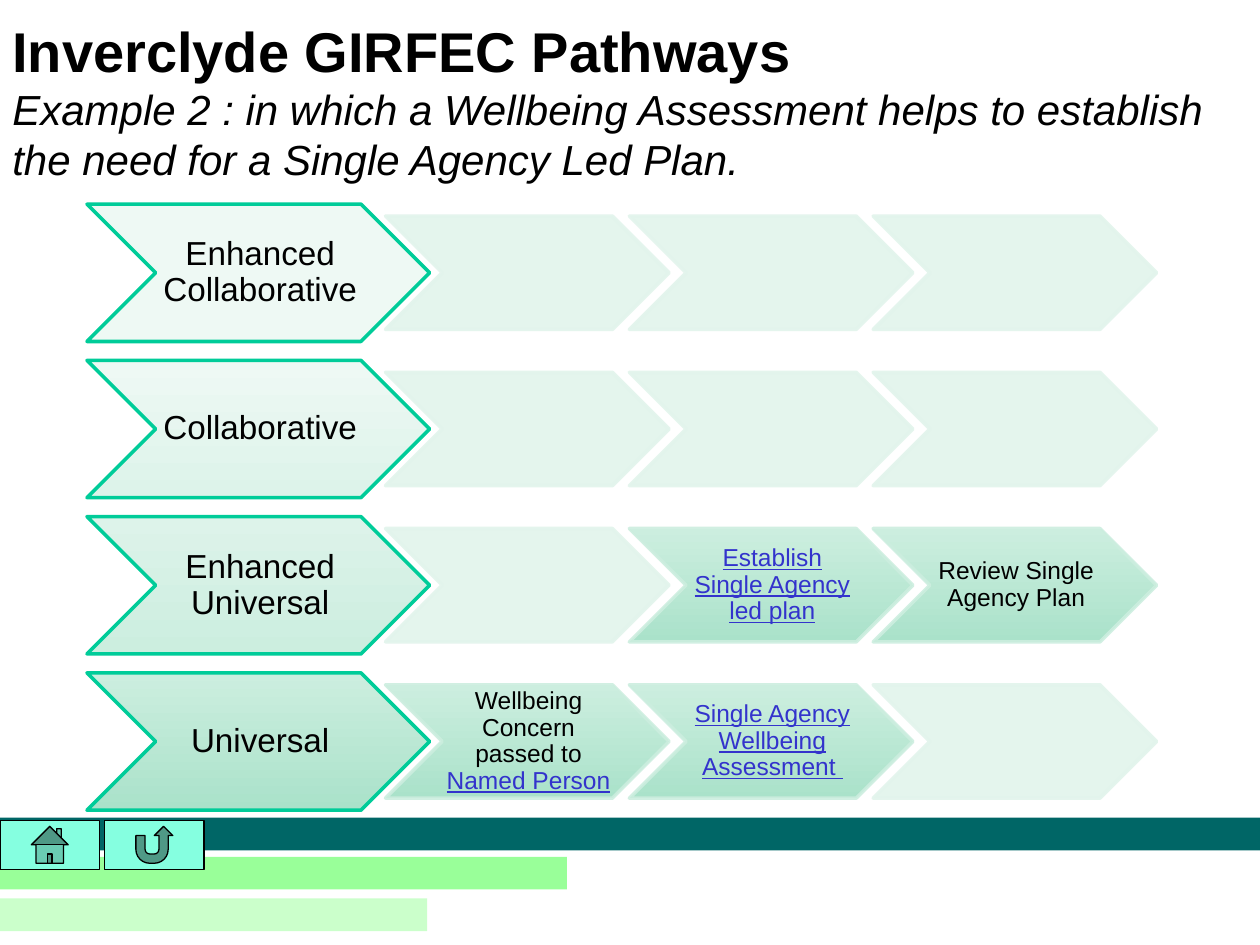
import pptx
import pptx.util
import pptx.dml.color
import pptx.enum.shapes
import pptx.enum.text
import pptx.oxml.ns
import lxml.etree

Inches, Pt = pptx.util.Inches, pptx.util.Pt
Shape = pptx.enum.shapes.MSO_SHAPE
Align, Anchor = pptx.enum.text.PP_ALIGN, pptx.enum.text.MSO_ANCHOR

# Content: a step is a list of (text, is_link) spans; None is an unused step
TITLE = "Inverclyde GIRFEC Pathways"
SUBTITLE = ("Example 2 : in which a Wellbeing Assessment helps to establish "
            "the need for a Single Agency Led Plan.")
PATHWAYS = [
    ("Enhanced Collaborative", [None, None, None]),
    ("Collaborative", [None, None, None]),
    ("Enhanced Universal", [
        None,
        [("Establish Single Agency led plan", True)],
        [("Review Single Agency Plan", False)],
    ]),
    ("Universal", [
        [("Wellbeing Concern passed to ", False), ("Named Person", True)],
        [("Single Agency Wellbeing Assessment ", True)],
        None,
    ]),
]

THEME = {
    "font": "Arial",
    "title": 32, "subtitle": 24, "label": 19, "step": 14,
    "text": "000000", "link": "3333CC",
    "shades": ["EEF9F4", "DDF3EA", "CCEEDF", "AAE2CA"],
    "outline": "00CC99", "unused": "E2F4EC",
    "button": "85FFE0",
}
# Footer bars: top, width, colour, opacity
BARS = [(7.13, 3.39, "99FF99", 50), (6.8, 4.5, "99FF99", 100), (6.49, 10, "006666", 100)]
BUTTONS = [Shape.ACTION_BUTTON_HOME, Shape.ACTION_BUTTON_RETURN]

# Grid, in inches
GRID_TOP, ROW_PITCH = 1.62, 1.24
LABEL_LEFT, LABEL_WIDTH, LABEL_HEIGHT = 0.69, 2.72, 1.09
STEP_LEFT, STEP_PITCH, STEP_WIDTH, STEP_HEIGHT = 3.06, 1.935, 2.25, 0.9
BUTTON_TOP, BUTTON_PITCH, BUTTON_WIDTH, BUTTON_HEIGHT = 6.51, 0.83, 0.79, 0.39


def rgb(value):
    return pptx.dml.color.RGBColor.from_string(value)


def set_opacity(element, percent):
    for color in element.iter(pptx.oxml.ns.qn("a:srgbClr")):
        alpha = lxml.etree.SubElement(color, pptx.oxml.ns.qn("a:alpha"))
        alpha.set("val", str(percent * 1000))


def add_shape(page, kind, area, bottom, top=None, line=None, width=2, opacity=100):
    """Fill with one colour, or with a gradient running from bottom to top."""
    shape = page.shapes.add_shape(kind, *map(Inches, area))
    shape.shadow.inherit = False
    if top in (None, bottom):
        shape.fill.solid()
        shape.fill.fore_color.rgb = rgb(bottom)
        if opacity < 100:
            set_opacity(shape.fill._xPr, opacity)
    else:
        shape.fill.gradient()
        shape.fill.gradient_angle = 90
        for stop, value in zip(shape.fill.gradient_stops, (bottom, top)):
            stop.color.rgb = rgb(value)
    if line:
        shape.line.color.rgb = rgb(line)
        shape.line.width = Pt(width)
    else:
        shape.line.fill.background()
    return shape


def write_chevron(shape, spans, size, inset):
    frame = shape.text_frame
    frame.word_wrap = True
    frame.vertical_anchor = Anchor.MIDDLE
    frame.margin_left, frame.margin_right = Inches(inset), 0
    frame.margin_top = frame.margin_bottom = Inches(0.01)
    para = frame.paragraphs[0]
    para.alignment, para.line_spacing = Align.CENTER, 0.9
    para.font.name, para.font.size = THEME["font"], Pt(size)
    for text, is_link in spans:
        span = para.add_run()
        span.text = text
        span.font.color.rgb = rgb(THEME["link" if is_link else "text"])
        if is_link:
            span.font.underline = True


def add_heading(page):
    box = page.shapes.add_textbox(0, Inches(0.13), Inches(10), Inches(1.4))
    frame = box.text_frame
    frame.word_wrap = True
    frame.margin_top = frame.margin_bottom = 0
    for index, (text, style) in enumerate([(TITLE, "title"), (SUBTITLE, "subtitle")]):
        para = frame.paragraphs[0] if index == 0 else frame.add_paragraph()
        para.text = text
        para.font.name, para.font.size = THEME["font"], Pt(THEME[style])
        para.font.color.rgb = rgb(THEME["text"])
        para.font.bold, para.font.italic = style == "title", style == "subtitle"


def add_pathway(page, row, label, steps):
    shades = THEME["shades"]
    top = GRID_TOP + row * ROW_PITCH
    area = (LABEL_LEFT, top, LABEL_WIDTH, LABEL_HEIGHT)
    chevron = add_shape(page, Shape.CHEVRON, area, shades[row],
                        shades[max(row - 1, 0)], THEME["outline"])
    write_chevron(chevron, [(label, False)], THEME["label"], 0.03)

    step_top = top + (LABEL_HEIGHT - STEP_HEIGHT) / 2
    for column, spans in enumerate(steps):
        area = (STEP_LEFT + column * STEP_PITCH, step_top, STEP_WIDTH, STEP_HEIGHT)
        if spans:
            chevron = add_shape(page, Shape.CHEVRON, area, shades[3], shades[2], shades[2])
            write_chevron(chevron, spans, THEME["step"], 0.02)
        else:
            chevron = add_shape(page, Shape.CHEVRON, area, THEME["unused"],
                                line=THEME["unused"], opacity=90)
        set_opacity(chevron.line._ln, 90)


def main():
    deck = pptx.Presentation()
    deck.slide_width, deck.slide_height = Inches(10), Inches(7.5)
    page = deck.slides.add_slide(deck.slide_layouts[6])

    # Footer bars
    for top, width, color, opacity in BARS:
        add_shape(page, Shape.RECTANGLE, (0, top, width, 0.26), color, opacity=opacity)

    add_heading(page)

    # Pathway rows
    for row, (label, steps) in enumerate(PATHWAYS):
        add_pathway(page, row, label, steps)

    # Navigation buttons
    for column, kind in enumerate(BUTTONS):
        area = (column * BUTTON_PITCH, BUTTON_TOP, BUTTON_WIDTH, BUTTON_HEIGHT)
        add_shape(page, kind, area, THEME["button"], line=THEME["text"], width=0.75)

    deck.save("out.pptx")


if __name__ == "__main__":
    main()
